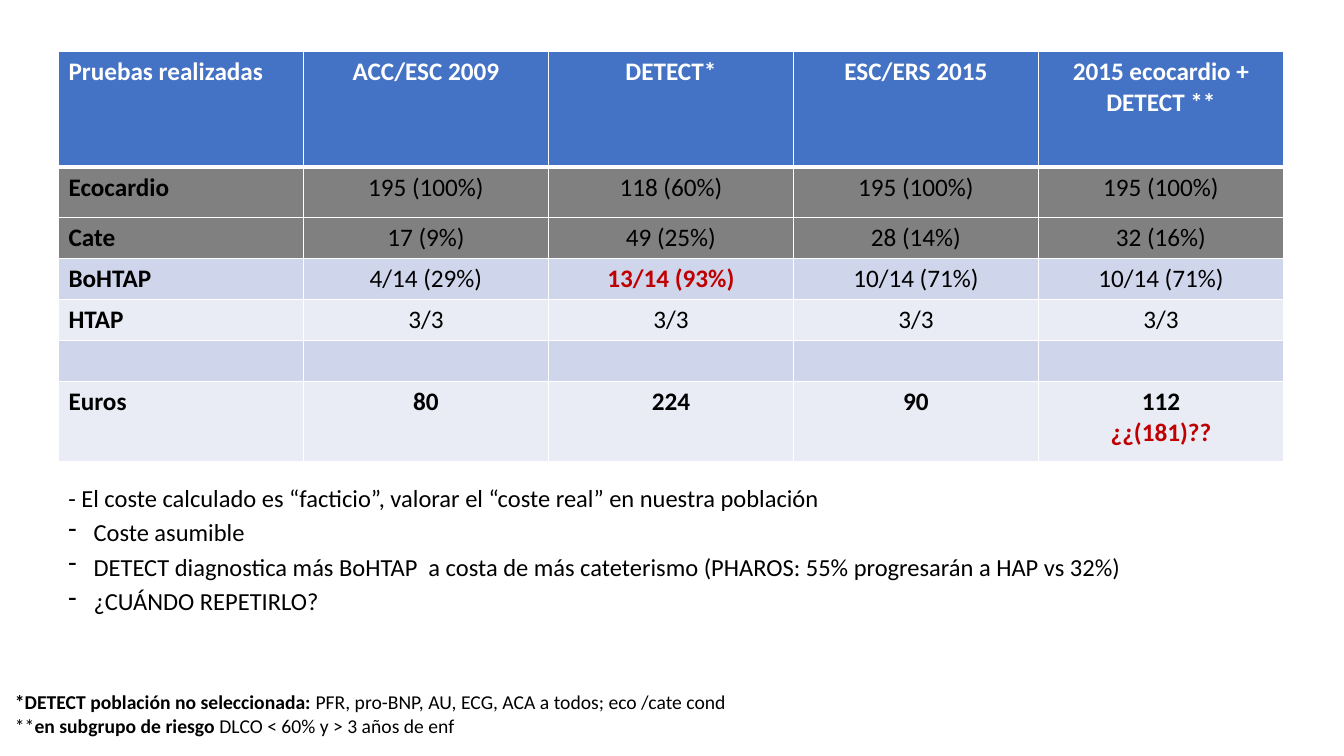
from dataclasses import dataclass

from lxml.etree import SubElement
from pptx import Presentation
from pptx.dml.color import RGBColor as RGB
from pptx.enum.text import PP_ALIGN as Align
from pptx.oxml.ns import qn
from pptx.util import Inches, Pt


@dataclass
class Theme:
    face: str = "Calibri"
    white: str = "FFFFFF"
    black: str = "000000"
    red: str = "C00000"
    blue: str = "4472C4"
    gray: str = "808080"
    band: str = "CFD5EA"
    pale: str = "E9EBF5"
    cell: float = 18
    body: float = 17.5
    foot: float = 14


theme = Theme()


def style(font, size, color, bold=None):
    font.name, font.size, font.bold = theme.face, Pt(size), bold
    font.color.rgb = RGB.from_string(color)


def border(cell, side, width):
    line = SubElement(cell._tc.get_or_add_tcPr(), qn(f"a:{side}"), w=str(Pt(width)))
    fill = SubElement(line, qn("a:solidFill"))
    SubElement(fill, qn("a:srgbClr"), val=theme.white)


deck = Presentation()
deck.slide_width, deck.slide_height = Inches(13.33), Inches(7.5)
slide = deck.slides.add_slide(deck.slide_layouts[6])

# Table: height, fill and texts of each row
rows = [
    (1.15, theme.blue, ["Pruebas realizadas", "ACC/ESC 2009", "DETECT*",
                        "ESC/ERS 2015", "2015 ecocardio + DETECT **"]),
    (0.5, theme.gray, ["Ecocardio", "195 (100%)", "118 (60%)", "195 (100%)", "195 (100%)"]),
    (0.34, theme.gray, ["Cate", "17 (9%)", "49 (25%)", "28 (14%)", "32 (16%)"]),
    (0.34, theme.band, ["BoHTAP", "4/14 (29%)", "13/14 (93%)", "10/14 (71%)", "10/14 (71%)"]),
    (0.37, theme.pale, ["HTAP"] + ["3/3"] * 4),
    (0.37, theme.band, [""] * 5),
    (0.8, theme.pale, ["Euros", "80", "224", "90", "112\n¿¿(181)??"]),
]
alerts = {"13/14 (93%)", "¿¿(181)??"}
last = len(rows) - 1

table = slide.shapes.add_table(len(rows), 5, Inches(0.58), Inches(0.51),
                               Inches(12.17), Inches(4.04)).table
for col in table.columns:
    col.width = Inches(2.43)
for r, (height, fill, texts) in enumerate(rows):
    table.rows[r].height = Inches(height)
    for c, text in enumerate(texts):
        cell = table.cell(r, c)
        for side in ("lnL", "lnR", "lnT", "lnB"):
            heavy = (r, side) in ((0, "lnB"), (1, "lnT"))
            border(cell, side, 3 if heavy else 1)
        cell.fill.solid()
        cell.fill.fore_color.rgb = RGB.from_string(fill)
        cell.text = text
        for para in cell.text_frame.paragraphs:
            alert = para.text in alerts
            color = theme.red if alert else theme.white if r == 0 else theme.black
            style(para.font, theme.cell, color, alert or c == 0 or r in (0, last))
            para.alignment = Align.CENTER if c else Align.LEFT

# Remarks: the first is plain, the others hang from a dash
notes = [
    "- El coste calculado es “facticio”, valorar el “coste real” en nuestra población",
    "Coste asumible",
    "DETECT diagnostica más BoHTAP  a costa de más cateterismo "
    "(PHAROS: 55% progresarán a HAP vs 32%)",
    "¿CUÁNDO REPETIRLO?",
]
frame = slide.shapes.add_textbox(Inches(0.58), Inches(4.82),
                                 Inches(12.17), Inches(1.41)).text_frame
frame.word_wrap = True
frame.text = "\n".join(notes)
for i, para in enumerate(frame.paragraphs):
    style(para.font, theme.body, theme.black)
    para.line_spacing, para.space_before = 0.7, Pt(10)
    if i:
        props = para._p.get_or_add_pPr()
        props.set("marL", str(Inches(0.25)))
        props.set("indent", str(-Inches(0.25)))
        dash = props.makeelement(qn("a:buChar"), {"char": "-"})
        props.find(qn("a:defRPr")).addprevious(dash)

# Footnotes: text and weight of each run
feet = [
    [("*DETECT población no seleccionada: ", True),
     ("PFR, pro-BNP, AU, ECG, ACA a todos; eco /cate cond", False)],
    [("**", False), ("en subgrupo de riesgo ", True),
     ("DLCO < 60% y > 3 años de enf", False)],
]
frame = slide.shapes.add_textbox(Inches(0.05), Inches(6.8),
                                 Inches(13.28), Inches(0.6)).text_frame
frame.word_wrap = True
for i, parts in enumerate(feet):
    para = frame.add_paragraph() if i else frame.paragraphs[0]
    for text, bold in parts:
        run = para.add_run()
        run.text = text
        style(run.font, theme.foot, theme.black, bold)

deck.save("out.pptx")
